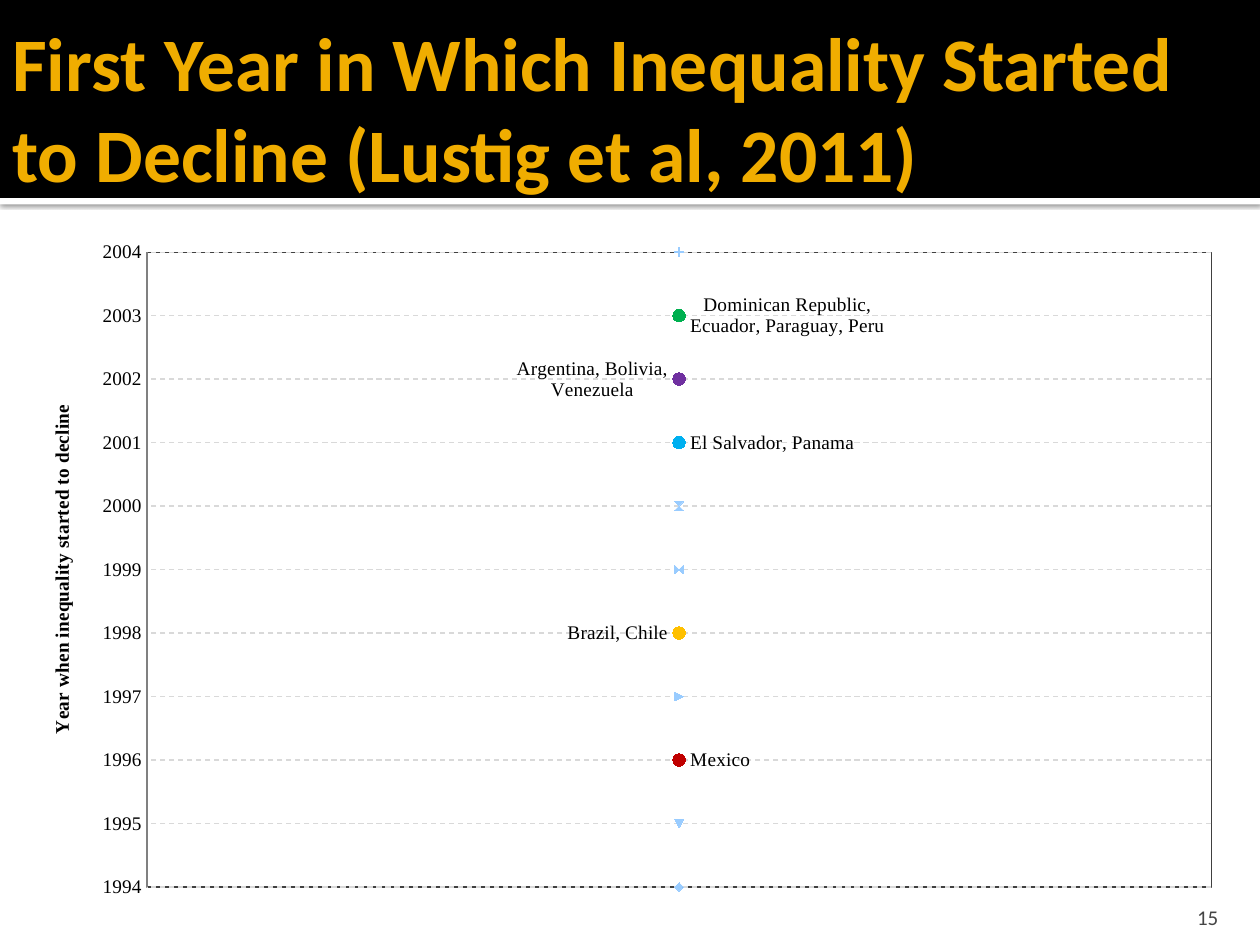
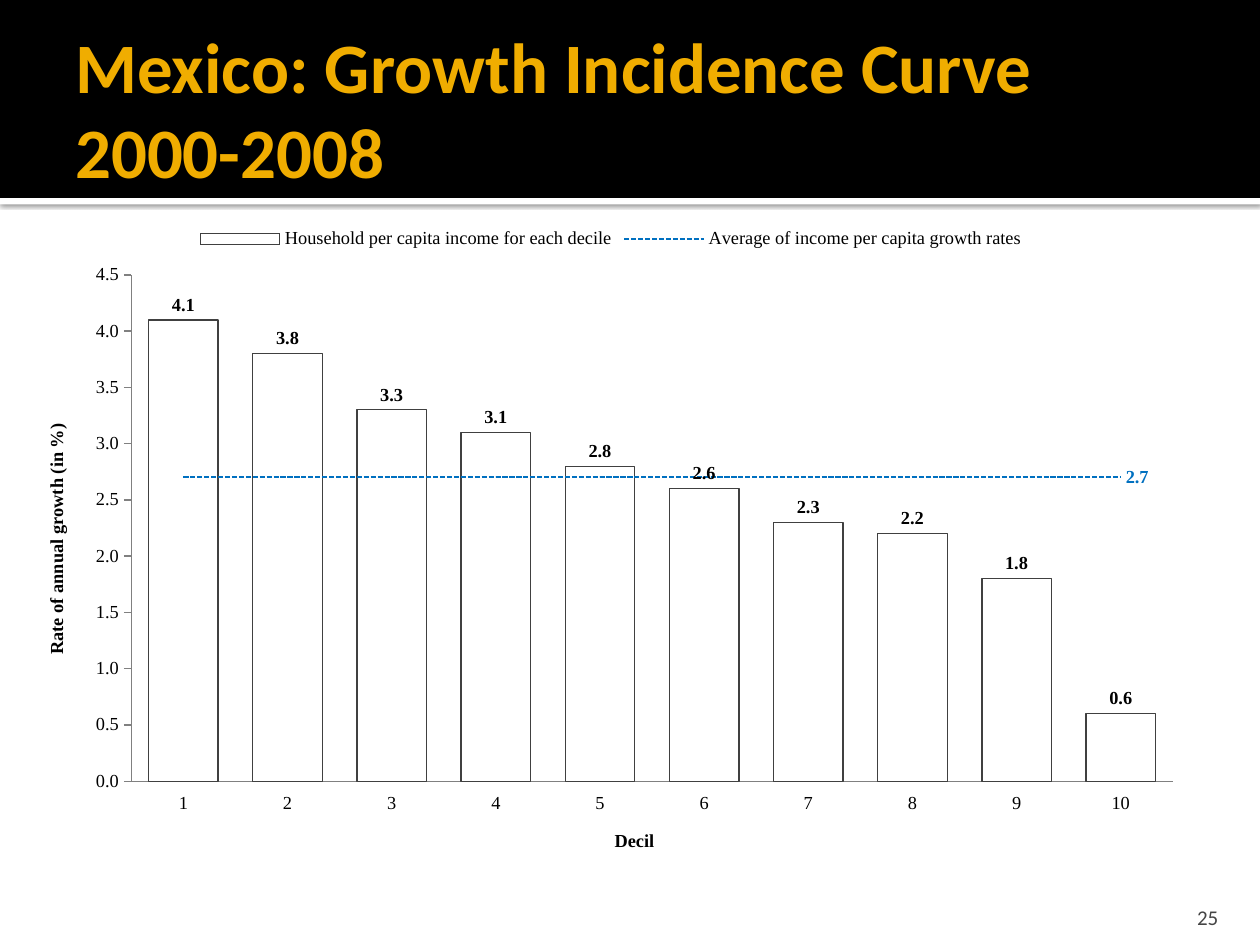
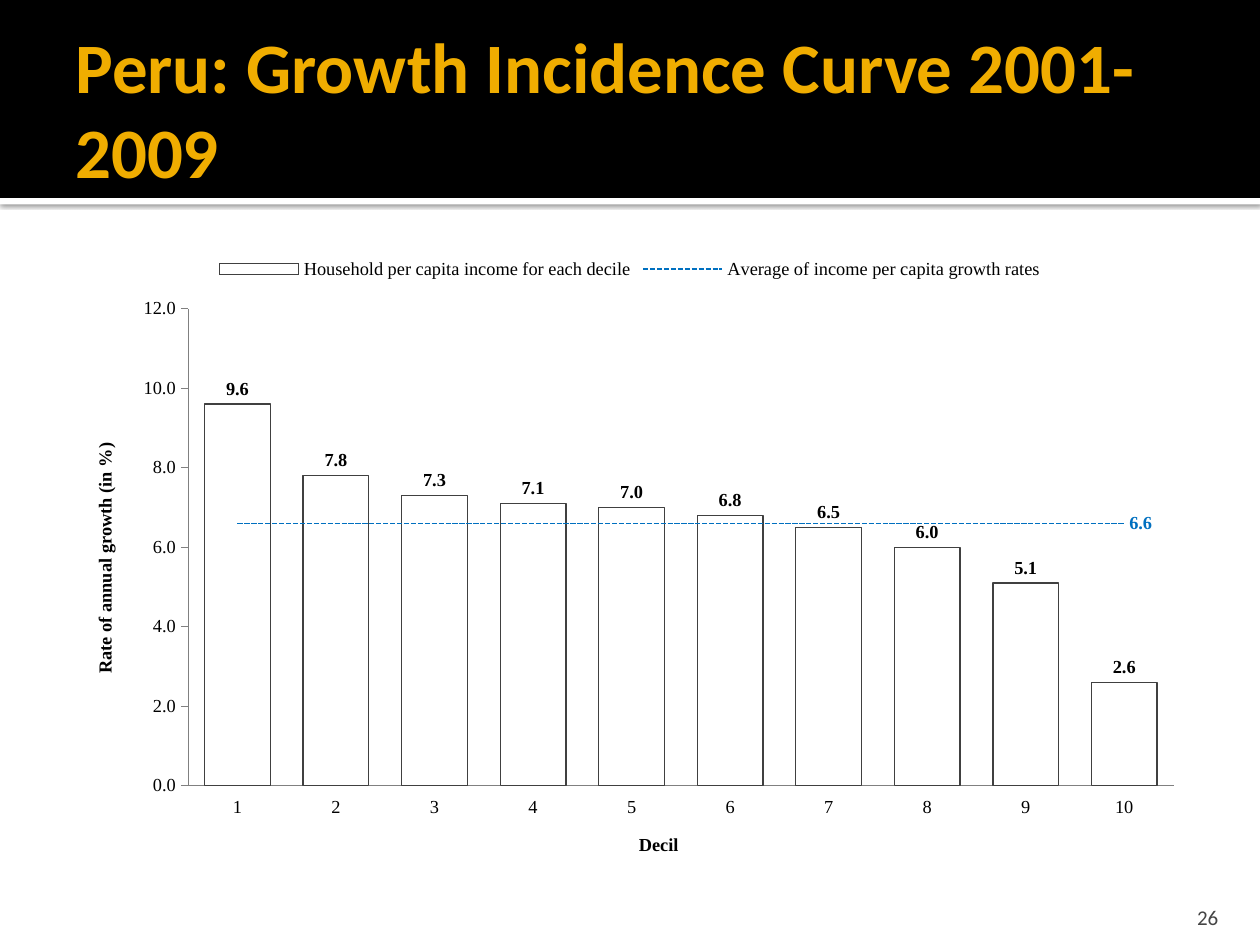
import dataclasses
import typing

import pptx
import pptx.chart.data
import pptx.chart.datalabel
import pptx.dml.color
import pptx.enum.chart
import pptx.enum.dml
import pptx.enum.shapes
import pptx.enum.text
import pptx.oxml
import pptx.oxml.ns
import pptx.util

Cm = pptx.util.Cm
Pt = pptx.util.Pt
RGBColor = pptx.dml.color.RGBColor
Position = pptx.enum.chart.XL_LABEL_POSITION
qn = pptx.oxml.ns.qn

# Shared look
WHITE = RGBColor(0xFF, 0xFF, 0xFF)
BLACK = RGBColor(0x00, 0x00, 0x00)
GOLD = RGBColor(0xF0, 0xAD, 0x00)
NUMBER_GREY = RGBColor(0x45, 0x45, 0x45)
OUTLINE_GREY = RGBColor(0x40, 0x40, 0x40)
AXIS_GREY = RGBColor(0x80, 0x80, 0x80)
GRID_GREY = RGBColor(0xD9, 0xD9, 0xD9)
AVERAGE_BLUE = RGBColor(0x00, 0x70, 0xC0)
PALE_BLUE = RGBColor(0x99, 0xCC, 0xFF)
RED = RGBColor(0xC0, 0x00, 0x00)
AMBER = RGBColor(0xFF, 0xC0, 0x00)
SKY = RGBColor(0x00, 0xB0, 0xF0)
PURPLE = RGBColor(0x70, 0x30, 0xA0)
GREEN = RGBColor(0x00, 0xB0, 0x50)

TEXT_FONT = "Calibri"
CHART_FONT = "Times New Roman"
ONE_DECIMAL = "#,##0.0"
NAMESPACES = pptx.oxml.ns.nsdecls("a", "c")


class Box(typing.NamedTuple):
    """Left, top, width and height in centimetres."""
    left: float
    top: float
    width: float
    height: float

    def lengths(self) -> list:
        return [Cm(value) for value in self]


class Layout(typing.NamedTuple):
    """Inner plot area as fractions of the chart."""
    x: float
    y: float
    w: float
    h: float


@dataclasses.dataclass
class YearGroup:
    year: int
    countries: str
    color: RGBColor
    position: typing.Any = Position.RIGHT


@dataclasses.dataclass
class GrowthSlide:
    title: str
    number: int
    box: Box
    layout: Layout
    growth: list[float]
    average: float
    maximum: float
    step: float


TITLE_BOX = Box(1.27, 0.43, 22.86, 3.48)

YEARS = range(1994, 2005)
YEAR_GROUPS = [
    YearGroup(1996, "Mexico", RED),
    YearGroup(1998, "Brazil, Chile", AMBER, Position.LEFT),
    YearGroup(2001, "El Salvador, Panama", SKY),
    YearGroup(2002, "Argentina, Bolivia, Venezuela", PURPLE, Position.LEFT),
    YearGroup(2003, "Dominican Republic, Ecuador, Paraguay, Peru", GREEN),
]

GROWTH_SLIDES = [
    GrowthSlide("Mexico: Growth Incidence Curve 2000-2008", 25,
                Box(0.51, 4.32, 23.62, 13.46), Layout(0.09, 0.09, 0.89, 0.76),
                [4.1, 3.8, 3.3, 3.1, 2.8, 2.6, 2.3, 2.2, 1.8, 0.6], 2.7, 4.5, 0.5),
    GrowthSlide("Peru: Growth Incidence Curve 2001-2009", 26,
                Box(1.27, 4.93, 22.86, 12.85), Layout(0.11, 0.1, 0.87, 0.75),
                [9.6, 7.8, 7.3, 7.1, 7.0, 6.8, 6.5, 6.0, 5.1, 2.6], 6.6, 12, 2),
]


# Slide frame
def add_band(page, top: float, height: float, color: RGBColor):
    band = page.shapes.add_shape(pptx.enum.shapes.MSO_SHAPE.RECTANGLE,
                                 *Box(0, top, 25.4, height).lengths())
    band.shadow.inherit = False
    band.fill.solid()
    band.fill.fore_color.rgb = color
    band.line.fill.background()
    return band


def add_text(page, box: Box, text: str, size: float, color: RGBColor, anchor, insets: Box):
    frame = page.shapes.add_textbox(*box.lengths()).text_frame
    frame.word_wrap = True
    frame.vertical_anchor = anchor
    (frame.margin_left, frame.margin_top,
     frame.margin_right, frame.margin_bottom) = insets.lengths()
    para = frame.paragraphs[0]
    para.text = text
    para.font.name = TEXT_FONT
    para.font.size = Pt(size)
    para.font.color.rgb = color
    return para


def add_page(deck, title: str, number: int, size: float = 40.5, title_box: Box = TITLE_BOX):
    page = deck.slides.add_slide(deck.slide_layouts[6])
    edge = add_band(page, 3.99, 0.13, WHITE)
    effects = edge._element.spPr.find(qn("a:effectLst"))
    effects.append(pptx.oxml.parse_xml(
        f'<a:outerShdw {NAMESPACES} blurRad="31750" dist="10160" dir="5400000" rotWithShape="0">'
        '<a:srgbClr val="000000"><a:alpha val="60000"/></a:srgbClr></a:outerShdw>'))
    add_band(page, 0, 3.99, BLACK)
    anchors = pptx.enum.text.MSO_ANCHOR
    heading = add_text(page, title_box, title, size, GOLD, anchors.MIDDLE,
                       Box(0.25, 0.13, 0.13, 0.13))
    heading.font.bold = True
    footer = add_text(page, Box(22.78, 17.98, 2.03, 0.76), str(number), 12, NUMBER_GREY,
                      anchors.BOTTOM, Box(0.25, 0.13, 0.25, 0))
    footer.alignment = pptx.enum.text.PP_ALIGN.RIGHT
    return page


# Chart parts
def area_format(fill: str, line: RGBColor):
    return pptx.oxml.parse_xml(
        f'<c:spPr {NAMESPACES}>{fill}<a:ln w="9525"><a:solidFill>'
        f'<a:srgbClr val="{line}"/></a:solidFill></a:ln></c:spPr>')


def add_chart(page, kind, box: Box, data, size: float, layout: Layout):
    chart = page.shapes.add_chart(kind, *box.lengths(), data).chart
    chart.has_title = False
    chart.has_legend = False
    chart.font.name = CHART_FONT
    chart.font.size = Pt(size)
    chart.font.color.rgb = BLACK
    space = chart._chartSpace
    white_fill = f'<a:solidFill><a:srgbClr val="{WHITE}"/></a:solidFill>'
    space.find(qn("c:txPr")).addprevious(area_format(white_fill, WHITE))

    plot_area = space.chart.plotArea
    for old in plot_area.findall(qn("c:layout")):
        plot_area.remove(old)
    values = "".join(f'<c:{name} val="{value}"/>' for name, value in layout._asdict().items())
    plot_area.insert(0, pptx.oxml.parse_xml(
        f'<c:layout {NAMESPACES}><c:manualLayout><c:layoutTarget val="inner"/>'
        f'<c:xMode val="edge"/><c:yMode val="edge"/>{values}</c:manualLayout></c:layout>'))
    return chart


def style_axis(axis, title: str, size: float, tick, turned: bool = False) -> None:
    axis.major_tick_mark = tick
    axis.minor_tick_mark = pptx.enum.chart.XL_TICK_MARK.NONE
    axis.format.line.color.rgb = AXIS_GREY
    axis.format.line.width = Pt(0.75)
    frame = axis.axis_title.text_frame
    frame.text = title
    font = frame.paragraphs[0].font
    font.name = CHART_FONT
    font.size = Pt(size)
    font.bold = True
    font.color.rgb = BLACK
    if turned:
        frame._txBody.bodyPr.set("rot", "-5400000")


def set_scale(axis, minimum: float, maximum: float, step: float) -> None:
    axis.minimum_scale = minimum
    axis.maximum_scale = maximum
    axis.major_unit = step


# Scatter of first years of decline
def add_year_slide(deck) -> None:
    page = add_page(deck, "First Year in Which Inequality Started to Decline (Lustig et al, 2011)",
                    15, 43.2, Box(0, 0, 25.4, 4.32))
    groups = {group.year: group for group in YEAR_GROUPS}
    data = pptx.chart.data.XyChartData()
    for index, year in enumerate(YEARS, 1):
        name = groups[year].countries if year in groups else f"Series {index}"
        data.add_series(name).add_data_point(1, year)
    chart = add_chart(page, pptx.enum.chart.XL_CHART_TYPE.XY_SCATTER,
                      Box(0.51, 4.52, 24.41, 13.79), data, 11,
                      Layout(0.1, 0.04, 0.88, 0.93))
    chart._chartSpace.chart.plotArea.append(area_format("<a:noFill/>", OUTLINE_GREY))

    chart.category_axis.has_major_gridlines = False
    set_scale(chart.category_axis, 0, 2, 1)
    chart.category_axis.visible = False
    years = chart.value_axis
    style_axis(years, "Year when inequality started to decline", 11,
               pptx.enum.chart.XL_TICK_MARK.NONE, turned=True)
    set_scale(years, YEARS[0], YEARS[-1], 1)
    years.has_major_gridlines = True
    grid = years.major_gridlines.format.line
    grid.color.rgb = GRID_GREY
    grid.width = Pt(0.75)
    grid.dash_style = pptx.enum.dml.MSO_LINE.DASH

    # Years without a country keep the automatic marker shapes
    for year, series in zip(YEARS, chart.plots[0].series):
        group = groups.get(year)
        color = group.color if group else PALE_BLUE
        marker = series.marker
        marker.size = 7 if group else 5
        marker.format.fill.solid()
        marker.format.fill.fore_color.rgb = color
        marker.format.line.color.rgb = color
        if group:
            marker.style = pptx.enum.chart.XL_MARKER_STYLE.CIRCLE
            labels = pptx.chart.datalabel.DataLabels(series._element.get_or_add_dLbls())
            labels.show_series_name = True
            labels.show_value = False
            labels.position = group.position


# Columns per decile with the average as a line
def move_last_series_to_line(chart) -> None:
    bars = chart._chartSpace.chart.plotArea.find(qn("c:barChart"))
    series = bars.findall(qn("c:ser"))[-1]
    for flag in series.findall(qn("c:invertIfNegative")):
        series.remove(flag)
    axes = "".join(f'<c:axId val="{axis.get("val")}"/>' for axis in bars.findall(qn("c:axId")))
    lines = pptx.oxml.parse_xml(
        f'<c:lineChart {NAMESPACES}><c:grouping val="standard"/><c:varyColors val="0"/>'
        f'<c:marker val="1"/>{axes}</c:lineChart>')
    lines.insert(2, series)
    bars.addnext(lines)


def add_growth_slide(deck, growth: GrowthSlide) -> None:
    page = add_page(deck, growth.title, growth.number)
    data = pptx.chart.data.CategoryChartData(number_format=ONE_DECIMAL)
    deciles = len(growth.growth)
    data.categories = [str(decile) for decile in range(1, deciles + 1)]
    data.add_series("Household per capita income for each decile", growth.growth)
    data.add_series("Average of income per capita growth rates", [growth.average] * deciles)
    chart = add_chart(page, pptx.enum.chart.XL_CHART_TYPE.COLUMN_CLUSTERED,
                      growth.box, data, 10.5, growth.layout)
    move_last_series_to_line(chart)
    chart.has_legend = True
    chart.legend.position = pptx.enum.chart.XL_LEGEND_POSITION.TOP
    chart.legend.include_in_layout = False

    ticks = pptx.enum.chart.XL_TICK_MARK
    style_axis(chart.category_axis, "Decil", 10.5, ticks.NONE)
    chart.category_axis.tick_label_position = pptx.enum.chart.XL_TICK_LABEL_POSITION.LOW
    rates = chart.value_axis
    style_axis(rates, "Rate of annual growth (in %)", 10.5, ticks.OUTSIDE, turned=True)
    set_scale(rates, 0, growth.maximum, growth.step)
    rates.has_major_gridlines = False
    rates.tick_labels.number_format = ONE_DECIMAL
    rates.tick_labels.number_format_is_linked = False

    column_plot, line_plot = chart.plots
    column_plot.gap_width = 50
    column_plot.vary_by_categories = False
    columns = column_plot.series[0]
    columns.format.fill.solid()
    columns.format.fill.fore_color.rgb = WHITE
    columns.format.line.color.rgb = OUTLINE_GREY
    columns.format.line.width = Pt(0.75)
    labels = columns.data_labels
    labels.show_value = True
    labels.number_format = ONE_DECIMAL
    labels.number_format_is_linked = False
    labels.position = Position.OUTSIDE_END
    labels.font.bold = True

    average = line_plot.series[0]
    average.smooth = False
    average.marker.style = pptx.enum.chart.XL_MARKER_STYLE.NONE
    average.format.line.color.rgb = AVERAGE_BLUE
    average.format.line.width = Pt(1)
    average.format.line.dash_style = pptx.enum.dml.MSO_LINE.SQUARE_DOT
    average.data_labels.show_value = False
    last_label = average.points[deciles - 1].data_label
    last_label.position = Position.RIGHT
    last_label.font.name = CHART_FONT
    last_label.font.size = Pt(10.5)
    last_label.font.bold = True
    last_label.font.color.rgb = AVERAGE_BLUE


def main() -> None:
    deck = pptx.Presentation()
    deck.slide_width = Cm(25.4)
    deck.slide_height = Cm(19.05)
    add_year_slide(deck)
    for growth in GROWTH_SLIDES:
        add_growth_slide(deck, growth)
    deck.save("out.pptx")


if __name__ == "__main__":
    main()
